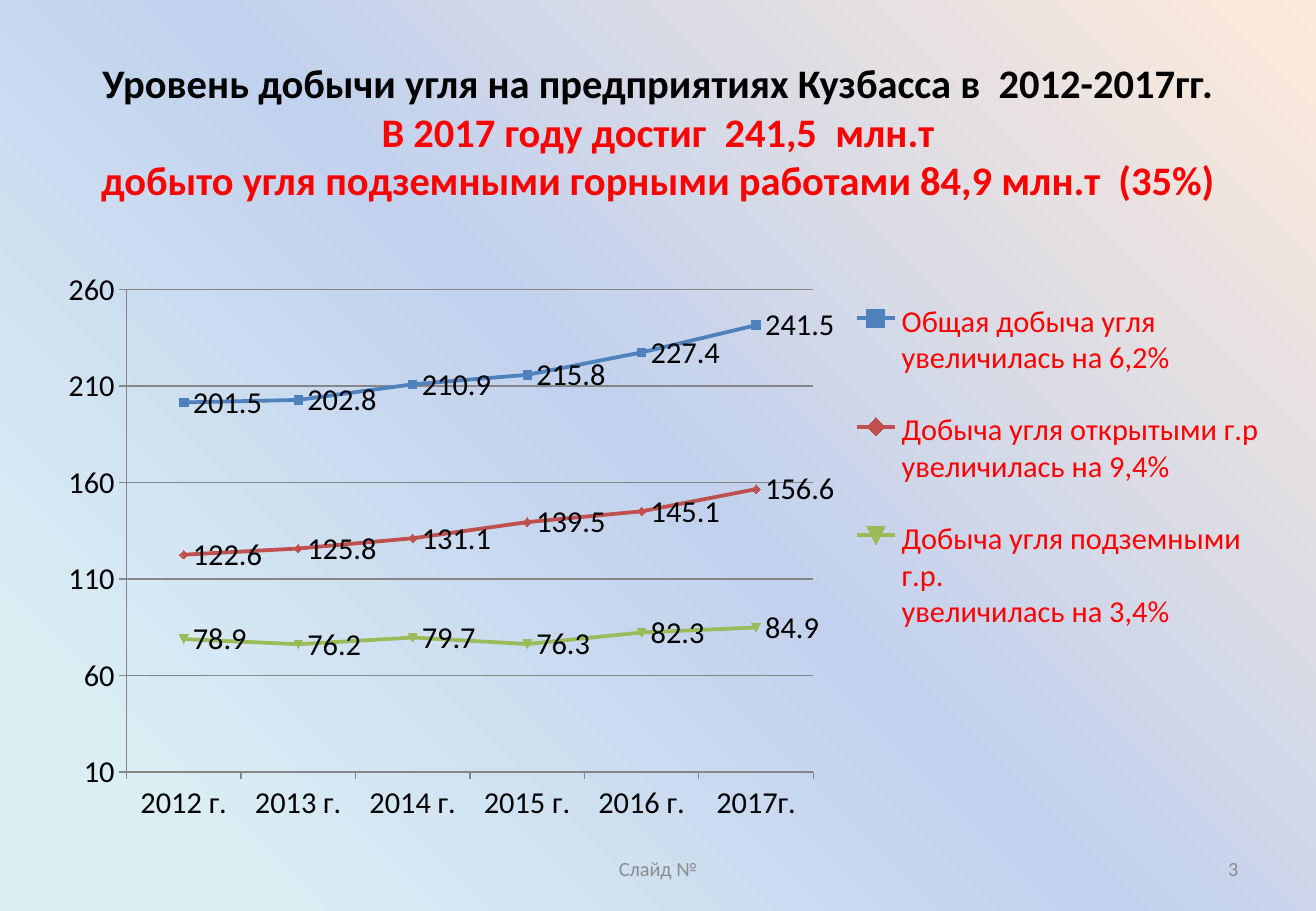
"""Builds the slide on coal output of Kuzbass in 2012-2017."""
from copy import deepcopy

from lxml import etree
from pptx import Presentation
from pptx import util as u
from pptx.chart.data import CategoryChartData
from pptx.dml.color import RGBColor
from pptx.enum import chart as charts, text
from pptx.oxml.ns import qn

COLOURS = {
    "black": "000000", "red": "FF0000", "grey": "8C8C8C", "grid": "868686",
    "total": "4F81BD", "open": "C0504D", "underground": "9BBB59",
    "aqua": "DBEEF4", "blue": "C2D1ED", "peach": "FDEADA",
}
YEARS = ["2012 г.", "2013 г.", "2014 г.", "2015 г.", "2016 г.", "2017г."]
OUTPUT = [
    ("Общая добыча угля\nувеличилась на 6,2%", "total",
     [201.5, 202.8, 210.9, 215.8, 227.4, 241.5]),
    ("Добыча угля открытыми г.р\nувеличилась на 9,4%", "open",
     [122.6, 125.8, 131.1, 139.5, 145.1, 156.6]),
    ("Добыча угля подземными г.р.\nувеличилась на 3,4%", "underground",
     [78.9, 76.2, 79.7, 76.3, 82.3, 84.9]),
]
HEADLINE = [
    ("Уровень добычи угля на предприятиях Кузбасса в  2012-2017гг.", "black"),
    ("В 2017 году достиг  241,5  млн.т", "red"),
    ("добыто угля подземными горными работами 84,9 млн.т  (35%)", "red"),
]


def rgb(name):
    return RGBColor.from_string(COLOURS[name])


def box(*lengths):
    return [u.Cm(length) for length in lengths]


class CoalSlide:
    """Holds the style and the current slide."""

    font = "Calibri"

    def __init__(self, deck):
        self.slide = deck.slides.add_slide(deck.slide_layouts[5])

    def style(self, font, size, colour, bold=False):
        font.name, font.size, font.bold = self.font, u.Pt(size), bold
        font.color.rgb = rgb(colour)

    def background(self, stops, angle):
        fill = self.slide.background.fill
        fill.gradient()
        fill.gradient_angle = angle
        stop_list = next(self.slide.background._cSld.iter(qn("a:gsLst")))
        stop_list.insert(1, deepcopy(stop_list[0]))
        for stop, (colour, position) in zip(fill.gradient_stops, stops):
            stop.color.rgb = rgb(colour)
            stop.position = position

    def title(self, lines, place):
        heading = self.slide.shapes.title
        heading.left, heading.top, heading.width, heading.height = box(*place)
        frame = heading.text_frame
        frame.text = "\n".join(line for line, _ in lines)
        frame.vertical_anchor = text.MSO_ANCHOR.MIDDLE
        for paragraph, (_, colour) in zip(frame.paragraphs, lines):
            paragraph.alignment = text.PP_ALIGN.CENTER
            self.style(paragraph.runs[0].font, 24, colour, True)

    def footer(self, words, place, alignment):
        frame = self.slide.shapes.add_textbox(*box(*place)).text_frame
        frame.word_wrap = True
        frame.vertical_anchor = text.MSO_ANCHOR.MIDDLE
        frame.text = words
        frame.paragraphs[0].alignment = alignment
        self.style(frame.paragraphs[0].runs[0].font, 12, "grey")

    def layout(self, parent, index, fractions, inner=False):
        for old in parent.findall(qn("c:layout")):
            parent.remove(old)
        layout = etree.Element(qn("c:layout"))
        manual = etree.SubElement(layout, qn("c:manualLayout"))
        settings = [("layoutTarget", "inner")] if inner else []
        settings += [("xMode", "edge"), ("yMode", "edge")]
        settings += zip("xywh", fractions)
        for tag, value in settings:
            etree.SubElement(manual, qn(f"c:{tag}")).set("val", str(value))
        parent.insert(index, layout)

    def line_chart(self, categories, rows, place):
        data = CategoryChartData(number_format="0.0")
        data.categories = categories
        for name, _, values in rows:
            data.add_series(name, values)
        chart = self.slide.shapes.add_chart(
            charts.XL_CHART_TYPE.LINE_MARKERS, *box(*place), data).chart
        chart.has_title = False
        self.style(chart.font, 18, "black")
        self.layout(chart._chartSpace.chart.plotArea, 0,
                    (0.065, 0.106, 0.557, 0.801), inner=True)
        self.axes(chart)
        for series, (_, colour, _) in zip(chart.plots[0].series, rows):
            self.series(series, colour)
        chart.has_legend = True
        legend = chart.legend
        legend.position = charts.XL_LEGEND_POSITION.RIGHT
        legend.include_in_layout = False
        self.style(legend.font, 18, "red")
        self.layout(legend._element, 1, (0.65, 0.07, 0.34, 0.66))

    def axes(self, chart):
        levels = chart.value_axis
        levels.minimum_scale, levels.maximum_scale = 10, 260
        levels.major_unit = 50
        levels.tick_labels.number_format = "General"
        levels.tick_labels.number_format_is_linked = False
        levels.major_gridlines.format.line.color.rgb = rgb("grid")
        for axis in (levels, chart.category_axis):
            axis.major_tick_mark = charts.XL_TICK_MARK.OUTSIDE
            axis.format.line.color.rgb = rgb("grid")

    def series(self, series, colour):
        series.smooth = False
        series.format.line.width = u.Pt(2.25)
        series.format.line.color.rgb = rgb(colour)
        series.marker.size = 5
        series.marker.format.fill.solid()
        series.marker.format.fill.fore_color.rgb = rgb(colour)
        series.marker.format.line.color.rgb = rgb(colour)
        labels = series.data_labels
        labels.show_value = True
        labels.position = charts.XL_LABEL_POSITION.RIGHT
        self.style(labels.font, 18, "black")


def main():
    deck = Presentation()
    deck.slide_width, deck.slide_height = box(27.51, 19.05)
    coal = CoalSlide(deck)
    coal.background([("aqua", 0.12), ("blue", 0.5), ("peach", 1)], 45)
    coal.title(HEADLINE, (1.37, 0.76, 24.77, 3.96))
    coal.line_chart(YEARS, OUTPUT, (0.97, 4.72, 25.78, 12.6))
    coal.footer("Слайд №", (9.4, 17.65, 8.71, 1.02), text.PP_ALIGN.CENTER)
    coal.footer("3", (19.71, 17.65, 6.43, 1.02), text.PP_ALIGN.RIGHT)
    deck.save("out.pptx")


if __name__ == "__main__":
    main()
